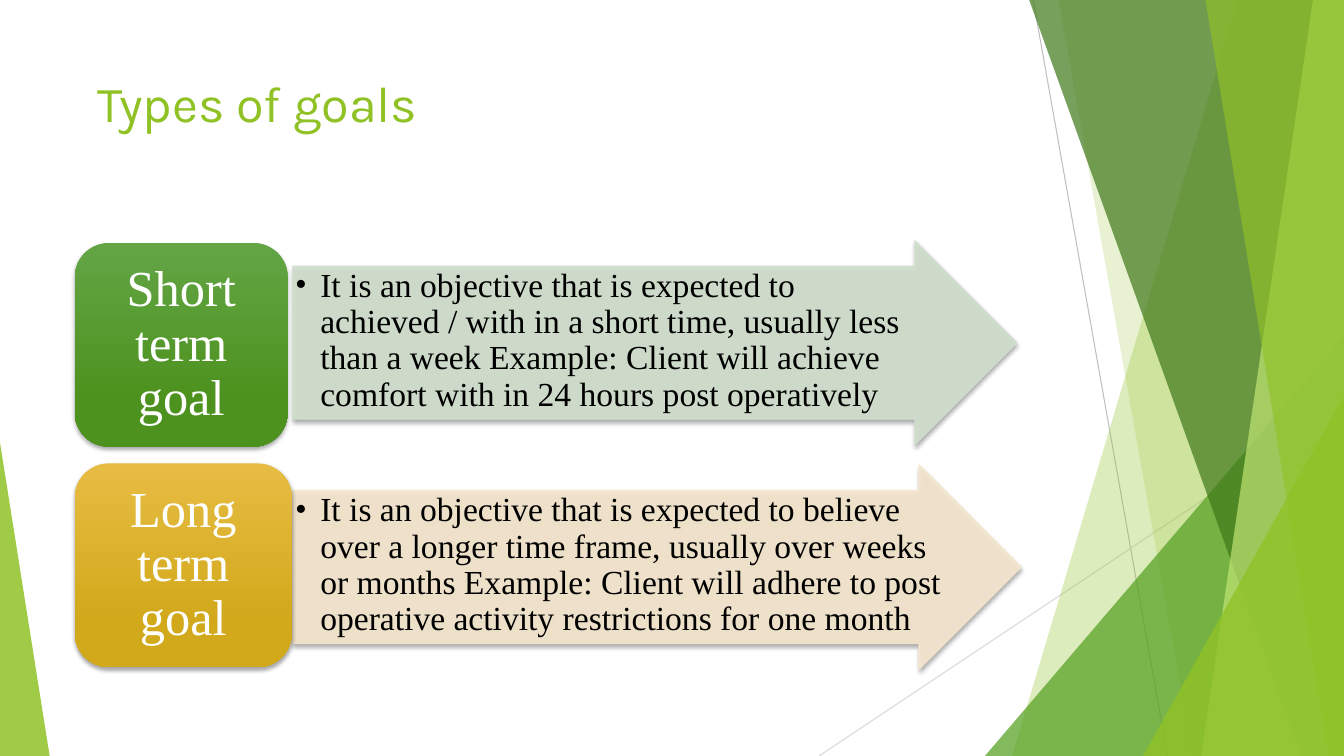
import pptx
import pptx.util
import pptx.dml.color
import pptx.enum.shapes
import pptx.enum.text
import pptx.oxml.ns
import lxml.etree

Pt = pptx.util.Pt
RGBColor = pptx.dml.color.RGBColor
SHAPE = pptx.enum.shapes.MSO_SHAPE
ANCHOR = pptx.enum.text.MSO_ANCHOR
ALIGN = pptx.enum.text.PP_ALIGN

LIME = RGBColor(0x90, 0xC2, 0x26)
PALE_LIME = RGBColor(0xC0, 0xE4, 0x74)
GREEN = RGBColor(0x54, 0xA0, 0x21)
DARK_GREEN = RGBColor(0x3F, 0x78, 0x19)
GREY = RGBColor(0xBF, 0xBF, 0xBF)
LIGHT_GREY = RGBColor(0xD9, 0xD9, 0xD9)
BLACK = RGBColor(0, 0, 0)
WHITE = RGBColor(0xFF, 0xFF, 0xFF)
BODY_FONT = "Times New Roman"

# Content
TITLE = "Types of goals"
GOALS = [
    {"label": "Short term goal",
     "text": "It is an objective that is expected to achieved / with in a short time, "
             "usually less than a week Example: Client will achieve comfort with in "
             "24 hours post operatively",
     "label_top": 173.5, "label_width": 152, "arrow_top": 172, "arrow_width": 517,
     "right_inset": 21, "tint": RGBColor(0xD1, 0xDF, 0xCD),
     "gradient": (RGBColor(0x63, 0xA5, 0x45), RGBColor(0x4D, 0x92, 0x1E))},
    {"label": "Long term goal",
     "text": "It is an objective that is expected to believe over a longer time frame, "
             "usually over weeks or months Example: Client will adhere to post "
             "operative activity restrictions for one month",
     "label_top": 331, "label_width": 155, "arrow_top": 332.3, "arrow_width": 520,
     "right_inset": 1.5, "tint": RGBColor(0xF5, 0xE6, 0xCD),
     "gradient": (RGBColor(0xE7, 0xBC, 0x43), RGBColor(0xD2, 0xA9, 0x1B))},
]
LABEL_LEFT, ARROW_LEFT, GOAL_HEIGHT = 53.5, 209.3, 145.5

# Decoration: lines (start, end, colour), then facets from back to front.
# A panel has its left edge at the top and bottom; a triangle has a box and peak.
WIDTH, HEIGHT, PANEL_TOP = 960, 540, -0.5
LINES = [((738, 0), (834, 540), GREY), ((960, 290), (585, 540), LIGHT_GREY)]
FACETS = [
    ("panel", (884, 723), LIME, 30),
    ("panel", (756, 852), LIME, 20),
    ("triangle", (703.5, 240, 256.5, 300, 1), GREEN, 72),
    ("panel", (735, 929.5), DARK_GREEN, 70),
    ("panel", (938, 858), PALE_LIME, 70),
    ("panel", (861, 949), LIME, 65),
    ("triangle", (816.5, 283, 143.5, 257, 1), LIME, 80),
    ("triangle", (0, 316, 35.5, 224, 0), LIME, 85),
]


def add_element(parent, name, **attributes):
    tag = pptx.oxml.ns.qn("a:" + name)
    return lxml.etree.SubElement(parent, tag, {k: str(v) for k, v in attributes.items()})


def set_solid(fill, colour, opacity):
    fill.solid()
    fill.fore_color.rgb = colour
    color_element = fill._xPr.find(".//" + pptx.oxml.ns.qn("a:srgbClr"))
    add_element(color_element, "alpha", val=opacity * 1000)


def add_shadow(shape):
    shape.shadow.inherit = False
    effects = shape._element.spPr.find(pptx.oxml.ns.qn("a:effectLst"))
    shadow = add_element(effects, "outerShdw", blurRad=Pt(3), dist=Pt(2),
                         dir=5400000, rotWithShape=0)
    colour = add_element(shadow, "srgbClr", val="000000")
    add_element(colour, "alpha", val=35000)


def set_text(shape, text, size, colour, alignment, anchor, insets):
    frame = shape.text_frame
    frame.word_wrap = True
    frame.vertical_anchor = anchor
    (frame.margin_left, frame.margin_top,
     frame.margin_right, frame.margin_bottom) = map(Pt, insets)
    paragraph = frame.paragraphs[0]
    paragraph.alignment = alignment
    paragraph.line_spacing = 0.9
    run = paragraph.add_run()
    run.text = text
    run.font.name = BODY_FONT
    run.font.size = Pt(size)
    run.font.color.rgb = colour
    return paragraph


def add_line(shapes, start, end, colour):
    line = shapes.add_connector(pptx.enum.shapes.MSO_CONNECTOR.STRAIGHT,
                                *map(Pt, start + end))
    line.line.color.rgb = colour
    line.line.width = Pt(0.75)
    add_element(line._element.spPr, "effectLst")


def add_facet(shapes, kind, geometry, colour, opacity):
    if kind == "panel":
        top_x, bottom_x = geometry
        builder = shapes.build_freeform(Pt(top_x), Pt(PANEL_TOP))
        corners = [(WIDTH, PANEL_TOP), (WIDTH, HEIGHT), (bottom_x, HEIGHT)]
        builder.add_line_segments([(Pt(x), Pt(y)) for x, y in corners], close=True)
        facet = builder.convert_to_shape()
    else:
        *box, peak = geometry
        facet = shapes.add_shape(SHAPE.ISOSCELES_TRIANGLE, *map(Pt, box))
        facet.adjustments[0] = peak
    set_solid(facet.fill, colour, opacity)
    facet.line.fill.background()
    facet.shadow.inherit = False


def add_goal(shapes, goal):
    # Arrow with the description
    arrow = shapes.add_shape(SHAPE.RIGHT_ARROW, Pt(ARROW_LEFT), Pt(goal["arrow_top"]),
                             Pt(goal["arrow_width"]), Pt(GOAL_HEIGHT))
    arrow.adjustments[0], arrow.adjustments[1] = 0.75, 0.5
    set_solid(arrow.fill, goal["tint"], 90)
    set_solid(arrow.line.fill, goal["tint"], 90)
    arrow.line.width = Pt(1)
    add_shadow(arrow)
    paragraph = set_text(arrow, goal["text"], 24, BLACK, ALIGN.LEFT, ANCHOR.TOP,
                         (1.5, 1.5, goal["right_inset"], 1.5))
    properties = paragraph._p.get_or_add_pPr()
    properties.set("marL", str(Pt(18)))
    properties.set("indent", str(-Pt(18)))
    add_element(properties, "buFont", typeface=BODY_FONT)
    add_element(properties, "buChar", char="•")

    # Rounded label
    label = shapes.add_shape(SHAPE.ROUNDED_RECTANGLE, Pt(LABEL_LEFT), Pt(goal["label_top"]),
                             Pt(goal["label_width"]), Pt(GOAL_HEIGHT))
    label.fill.gradient()
    label.fill.gradient_angle = 270
    for stop, colour, position in zip(label.fill.gradient_stops, goal["gradient"], (0, 0.78)):
        stop.color.rgb = colour
        stop.position = position
    label.line.fill.background()
    add_shadow(label)
    set_text(label, goal["label"], 36, WHITE, ALIGN.CENTER, ANCHOR.MIDDLE, (11, 5, 11, 5))


def main():
    presentation = pptx.Presentation()
    presentation.slide_width, presentation.slide_height = Pt(WIDTH), Pt(HEIGHT)
    slide = presentation.slides.add_slide(presentation.slide_layouts[5])

    for line in LINES:
        add_line(slide.shapes, *line)
    for facet in FACETS:
        add_facet(slide.shapes, *facet)

    # Title
    title = slide.shapes.title
    title.left, title.top, title.width, title.height = map(Pt, (53.5, 48, 677, 104))
    paragraph = set_text(title, TITLE, 36, LIME, ALIGN.LEFT, ANCHOR.TOP, (16.5, 3.6, 7.2, 3.6))
    paragraph.line_spacing = 1.0
    paragraph.runs[0].font.name = "Karla"

    for goal in GOALS:
        add_goal(slide.shapes, goal)
    presentation.save("out.pptx")


if __name__ == "__main__":
    main()
